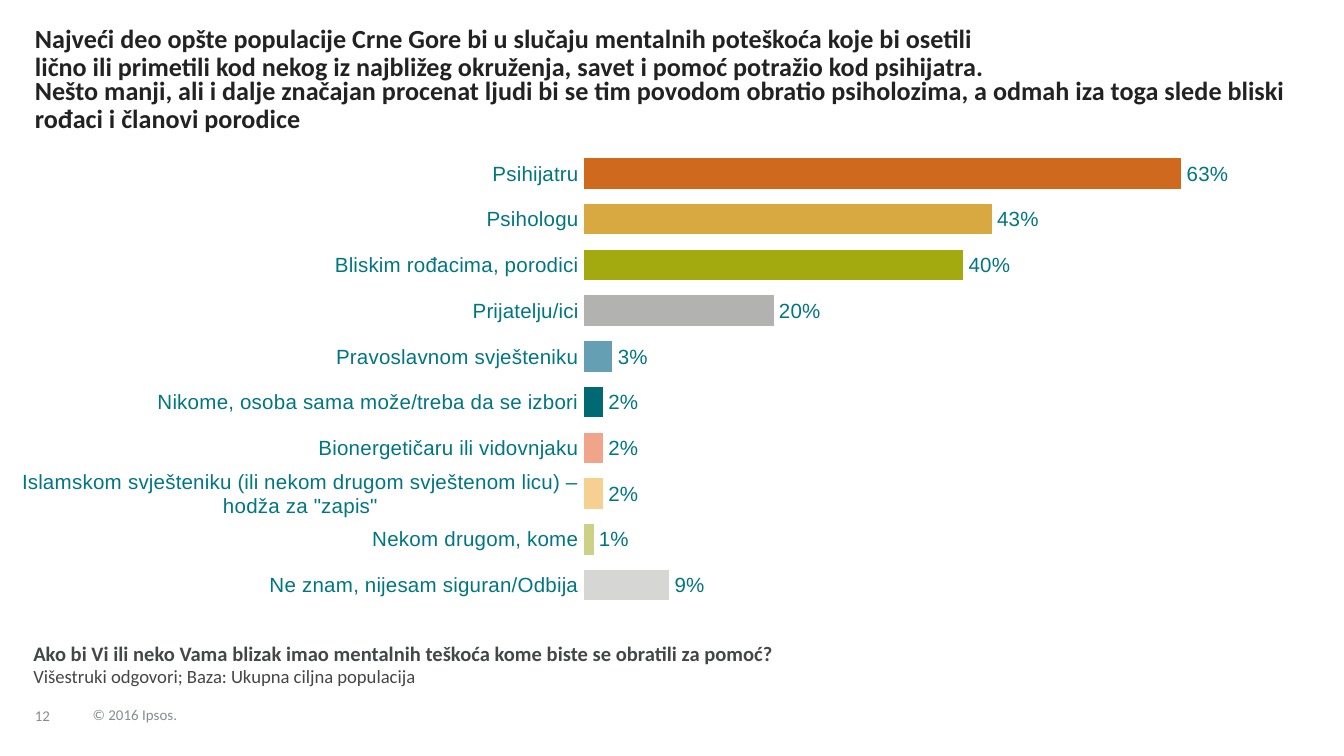
from dataclasses import dataclass

import pptx
import pptx.chart.data
import pptx.dml.color
import pptx.enum.chart
import pptx.enum.text
import pptx.oxml
import pptx.oxml.ns
import pptx.util
from pptx.util import Cm, Pt

TEAL = "007681"
INK = "222223"
DARK_GREY = "444647"
GREY = "888B8D"


@dataclass
class Frame:
    """Position and size in centimetres."""
    left: float
    top: float
    width: float
    height: float


@dataclass
class Answer:
    label: str
    percent: int
    color: str


ANSWERS = [
    Answer("Psihijatru", 63, "CF691D"),
    Answer("Psihologu", 43, "D7A940"),
    Answer("Bliskim rođacima, porodici", 40, "A3AA10"),
    Answer("Prijatelju/ici", 20, "B2B3B1"),
    Answer("Pravoslavnom svješteniku", 3, "659FB3"),
    Answer("Nikome, osoba sama može/treba da se izbori", 2, "006973"),
    Answer("Bionergetičaru ili vidovnjaku", 2, "F0A58A"),
    Answer("Islamskom svješteniku (ili nekom drugom svještenom licu) – "
           "hodža za \"zapis\"", 2, "F6D091"),
    Answer("Nekom drugom, kome", 1, "CBD287"),
    Answer("Ne znam, nijesam siguran/Odbija", 9, "D6D7D5"),
]


def rgb(color: str) -> pptx.dml.color.RGBColor:
    return pptx.dml.color.RGBColor.from_string(color)


def style_font(font, size: float, color: str, bold: bool = False,
               name: str = "Calibri") -> None:
    font.name = name
    font.size = Pt(size)
    font.bold = bold
    font.color.rgb = rgb(color)


def place(box, frame: Frame) -> None:
    box.left, box.top = Cm(frame.left), Cm(frame.top)
    box.width, box.height = Cm(frame.width), Cm(frame.height)


def write(box, text: str, *, size: float, color: str, bold: bool = False,
          spacing: float = 0.9, wrap: bool = True,
          anchor=pptx.enum.text.MSO_ANCHOR.TOP):
    """Fill a box with one left-aligned paragraph and return it."""
    text_frame = box.text_frame
    text_frame.margin_left = text_frame.margin_right = 0
    text_frame.margin_top = text_frame.margin_bottom = 0
    text_frame.auto_size = pptx.enum.text.MSO_AUTO_SIZE.NONE
    text_frame.word_wrap = wrap
    text_frame.vertical_anchor = anchor
    para = text_frame.paragraphs[0]
    para.alignment = pptx.enum.text.PP_ALIGN.LEFT
    para.line_spacing = spacing
    para.space_before = Pt(0)
    add_span(para, text, size=size, color=color, bold=bold)
    return para


def add_span(para, text: str, *, size: float, color: str,
             bold: bool = False) -> None:
    span = para.add_run()
    span.text = text
    style_font(span.font, size, color, bold)


def add_text(page, frame: Frame, text: str, **style):
    box = page.shapes.add_textbox(0, 0, 0, 0)
    place(box, frame)
    return write(box, text, **style)


def set_inner_layout(chart, x: float, y: float, w: float, h: float) -> None:
    """Fix the plot's inner area as fractions of the chart."""
    plot_area = chart._chartSpace.chart.plotArea
    for old in plot_area.findall(pptx.oxml.ns.qn("c:layout")):
        plot_area.remove(old)
    sizes = "".join(f'<c:{tag} val="{value}"/>' for tag, value in
                    (("x", x), ("y", y), ("w", w), ("h", h)))
    plot_area.insert(0, pptx.oxml.parse_xml(
        f'<c:layout {pptx.oxml.ns.nsdecls("c")}><c:manualLayout>'
        '<c:layoutTarget val="inner"/><c:xMode val="edge"/>'
        f'<c:yMode val="edge"/>{sizes}</c:manualLayout></c:layout>'))


def add_answer_chart(page, frame: Frame, answers: list[Answer]) -> None:
    data = pptx.chart.data.CategoryChartData()
    data.categories = [answer.label for answer in answers]
    data.add_series("Series 1", [answer.percent for answer in answers])
    chart = page.shapes.add_chart(
        pptx.enum.chart.XL_CHART_TYPE.BAR_CLUSTERED, Cm(frame.left),
        Cm(frame.top), Cm(frame.width), Cm(frame.height), data).chart
    chart.has_legend = False
    chart.has_title = False
    style_font(chart.font, 11, TEAL, name="Arial")
    set_inner_layout(chart, 0.46, 0.03, 0.53, 0.94)

    categories = chart.category_axis
    categories.reverse_order = True
    categories.major_tick_mark = pptx.enum.chart.XL_TICK_MARK.NONE
    categories.format.line.fill.background()
    style_font(categories.tick_labels.font, 11, TEAL, name="Arial")

    values = chart.value_axis
    values.minimum_scale, values.maximum_scale = 0, 70
    values.has_major_gridlines = False
    values.visible = False

    plot = chart.plots[0]
    plot.gap_width = 50
    plot.vary_by_categories = False
    series = plot.series[0]
    for index, answer in enumerate(answers):
        fill = series.points[index].format.fill
        fill.solid()
        fill.fore_color.rgb = rgb(answer.color)
    labels = series.data_labels
    labels.show_value = True
    labels.number_format = '0"%"'
    labels.number_format_is_linked = False
    labels.position = pptx.enum.chart.XL_LABEL_POSITION.OUTSIDE_END
    style_font(labels.font, 11, TEAL, name="Arial")


def main() -> None:
    deck = pptx.Presentation()
    deck.slide_width, deck.slide_height = Cm(25.4), Cm(14.28)
    page = deck.slides.add_slide(deck.slide_layouts[5])

    heading = {"size": 14, "color": INK, "bold": True}
    title = page.shapes.title
    place(title, Frame(0.66, 0.48, 18.21, 1.07))
    write(title, "Najveći deo opšte populacije Crne Gore bi u slučaju mentalnih "
          "poteškoća koje bi osetili lično ili primetili kod nekog iz najbližeg "
          "okruženja, savet i pomoć potražio kod psihijatra.", **heading)

    add_answer_chart(page, Frame(0.15, 2.57, 23.67, 9.19), ANSWERS)
    add_text(page, Frame(0.66, 1.47, 24.13, 1.07),
             "Nešto manji, ali i dalje značajan procenat ljudi bi se tim povodom "
             "obratio psiholozima, a odmah iza toga slede bliski rođaci i "
             "članovi porodice", **heading)

    question = add_text(
        page, Frame(0.63, 12.14, 18.67, 0.89),
        "Ako bi Vi ili neko Vama blizak imao mentalnih teškoća kome biste se "
        "obratili za pomoć?",
        size=11, color=DARK_GREY, bold=True, spacing=0.95)
    question.add_line_break()
    add_span(question, "Višestruki odgovori; Baza: Ukupna ciljna populacija",
             size=10, color=DARK_GREY)

    footer = {"size": 8, "color": GREY, "spacing": 0.85, "wrap": False,
              "anchor": pptx.enum.text.MSO_ANCHOR.BOTTOM}
    add_text(page, Frame(0.66, 13.03, 0.86, 0.66), "12", **footer)
    add_text(page, Frame(1.75, 13.21, 1.93, 0.46), "© 2016 Ipsos.", **footer)

    deck.save("out.pptx")


if __name__ == "__main__":
    main()
